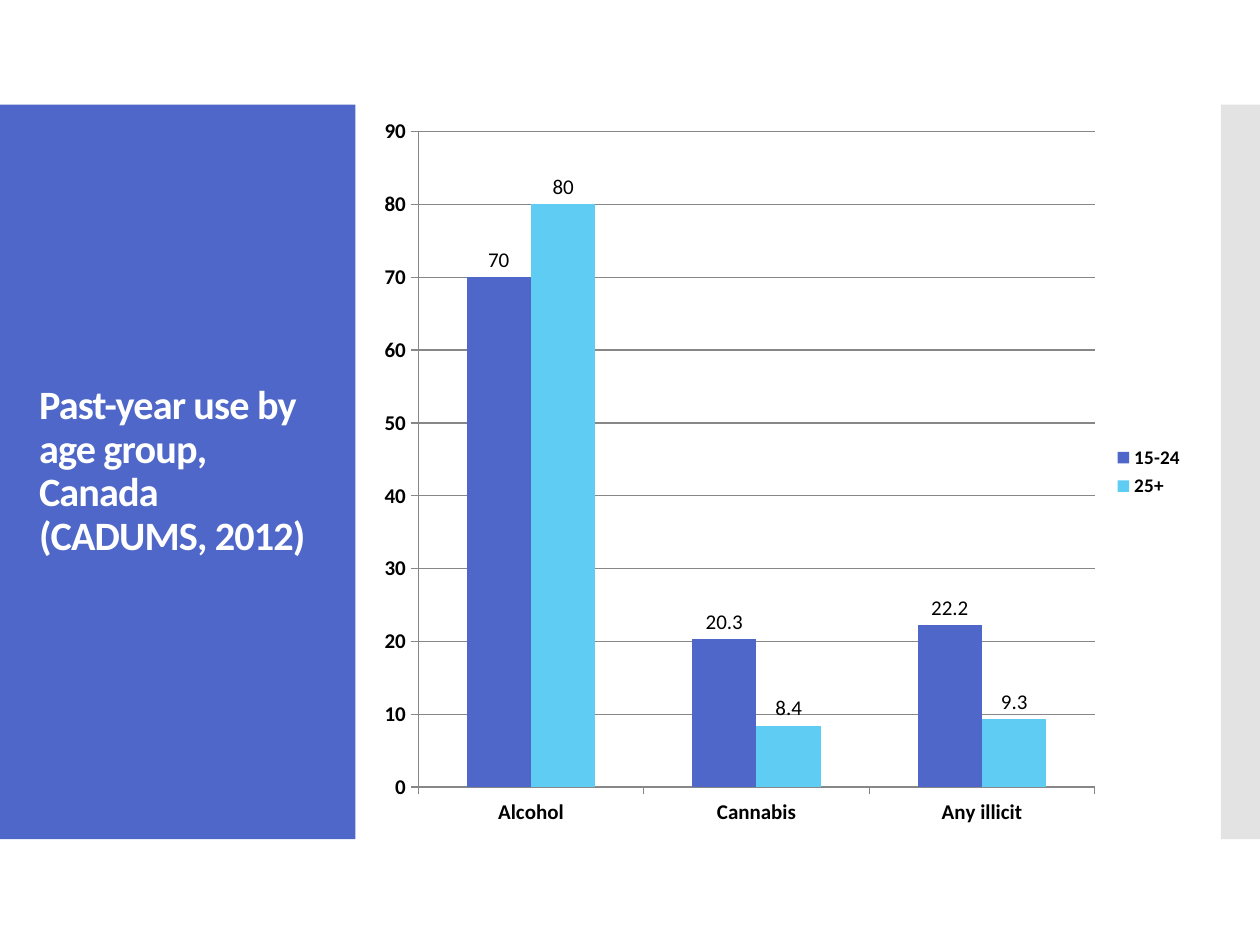
from lxml import etree
from pptx import Presentation
from pptx.chart.data import CategoryChartData
from pptx.dml.color import RGBColor
from pptx.enum.chart import XL_CHART_TYPE, XL_LABEL_POSITION, XL_LEGEND_POSITION, XL_TICK_MARK
from pptx.enum.shapes import MSO_SHAPE
from pptx.enum.text import MSO_ANCHOR, MSO_AUTO_SIZE, PP_ALIGN
from pptx.oxml.ns import qn
from pptx.util import Inches, Pt

RECTANGLE = MSO_SHAPE.RECTANGLE
CLUSTERED = XL_CHART_TYPE.COLUMN_CLUSTERED
OUTSIDE_END = XL_LABEL_POSITION.OUTSIDE_END
LEGEND_RIGHT = XL_LEGEND_POSITION.RIGHT
TICK_OUT = XL_TICK_MARK.OUTSIDE
TICK_NONE = XL_TICK_MARK.NONE
MIDDLE = MSO_ANCHOR.MIDDLE
NO_AUTOFIT = MSO_AUTO_SIZE.NONE
LEFT = PP_ALIGN.LEFT

FONT = "Calibri"
INDIGO, SKY, GRAY, LINE = "4E67C8", "5ECCF3", "C8C8C8", "878787"
BAND_TOP, BAND_HEIGHT = 0.83, 5.83
SUBSTANCES = ["Alcohol", "Cannabis", "Any illicit"]
AGE_GROUPS = [("15-24", [70, 20.3, 22.2], INDIGO), ("25+", [80, 8.4, 9.3], SKY)]


def color(hex_value):
    return RGBColor.from_string(hex_value)


def style_font(font, size, bold, hex_value="000000"):
    values = {"name": FONT, "size": Pt(size), "bold": bold}
    for name, value in values.items():
        setattr(font, name, value)
    font.color.rgb = color(hex_value)


def add_panel(slide, box, hex_value, opacity=100):
    panel = slide.shapes.add_shape(RECTANGLE, *map(Inches, box))
    panel.shadow.inherit = False
    panel.fill.solid()
    panel.fill.fore_color.rgb = color(hex_value)
    panel.line.fill.background()
    if opacity < 100:
        fill_color = panel.element.spPr.find(qn("a:solidFill"))[0]
        etree.SubElement(fill_color, qn("a:alpha"), val=str(opacity * 1000))


def place_title(slide, box, wording):
    title = slide.shapes.title
    # Bring the title in front of the panel it sits on
    slide.shapes.element.append(title.element)
    title.left, title.top, title.width, title.height = map(Inches, box)
    frame = title.text_frame
    frame.word_wrap = True
    frame.auto_size = NO_AUTOFIT
    frame.vertical_anchor = MIDDLE
    paragraph = frame.paragraphs[0]
    paragraph.alignment = LEFT
    paragraph.line_spacing = 0.9
    run = paragraph.add_run()
    run.text = wording
    style_font(run.font, 23, True, "FFFFFF")
    run.font._element.set("spc", "-50")


def add_usage_chart(slide, box):
    data = CategoryChartData()
    data.categories = SUBSTANCES
    for age_group, percentages, _ in AGE_GROUPS:
        data.add_series(age_group, percentages)
    chart = slide.shapes.add_chart(CLUSTERED, *map(Inches, box), data).chart
    style_font(chart.font, 12, True)
    chart.has_title = False

    chart.has_legend = True
    chart.legend.position = LEGEND_RIGHT
    chart.legend.include_in_layout = False
    style_font(chart.legend.font, 11, True)

    for axis in (chart.category_axis, chart.value_axis):
        axis.major_tick_mark = TICK_OUT
        axis.minor_tick_mark = TICK_NONE
        axis.format.line.color.rgb = color(LINE)
        style_font(axis.tick_labels.font, 12, True)
    values = chart.value_axis
    values.minimum_scale, values.maximum_scale, values.major_unit = 0, 90, 10
    values.has_major_gridlines = True
    values.major_gridlines.format.line.color.rgb = color(LINE)

    plot = chart.plots[0]
    plot.gap_width, plot.overlap, plot.vary_by_categories = 150, 0, False
    for series, (_, _, fill) in zip(plot.series, AGE_GROUPS):
        series.format.fill.solid()
        series.format.fill.fore_color.rgb = color(fill)
        series.data_labels.show_value = True
        series.data_labels.position = OUTSIDE_END
        style_font(series.data_labels.font, 12, False)


def build_slide(prs):
    slide = prs.slides.add_slide(prs.slide_layouts[5])
    add_panel(slide, (0, BAND_TOP, 2.82, BAND_HEIGHT), INDIGO)
    add_panel(slide, (9.69, BAND_TOP, 0.31, BAND_HEIGHT), GRAY, opacity=50)
    place_title(slide, (0.21, 1.23, 2.42, 5.03),
                "Past-year use by age group, Canada (CADUMS, 2012)")
    add_usage_chart(slide, (2.92, BAND_TOP, 6.58, BAND_HEIGHT))


def main():
    prs = Presentation()
    prs.slide_width, prs.slide_height = Inches(10), Inches(7.5)
    build_slide(prs)
    prs.save("out.pptx")


if __name__ == "__main__":
    main()
